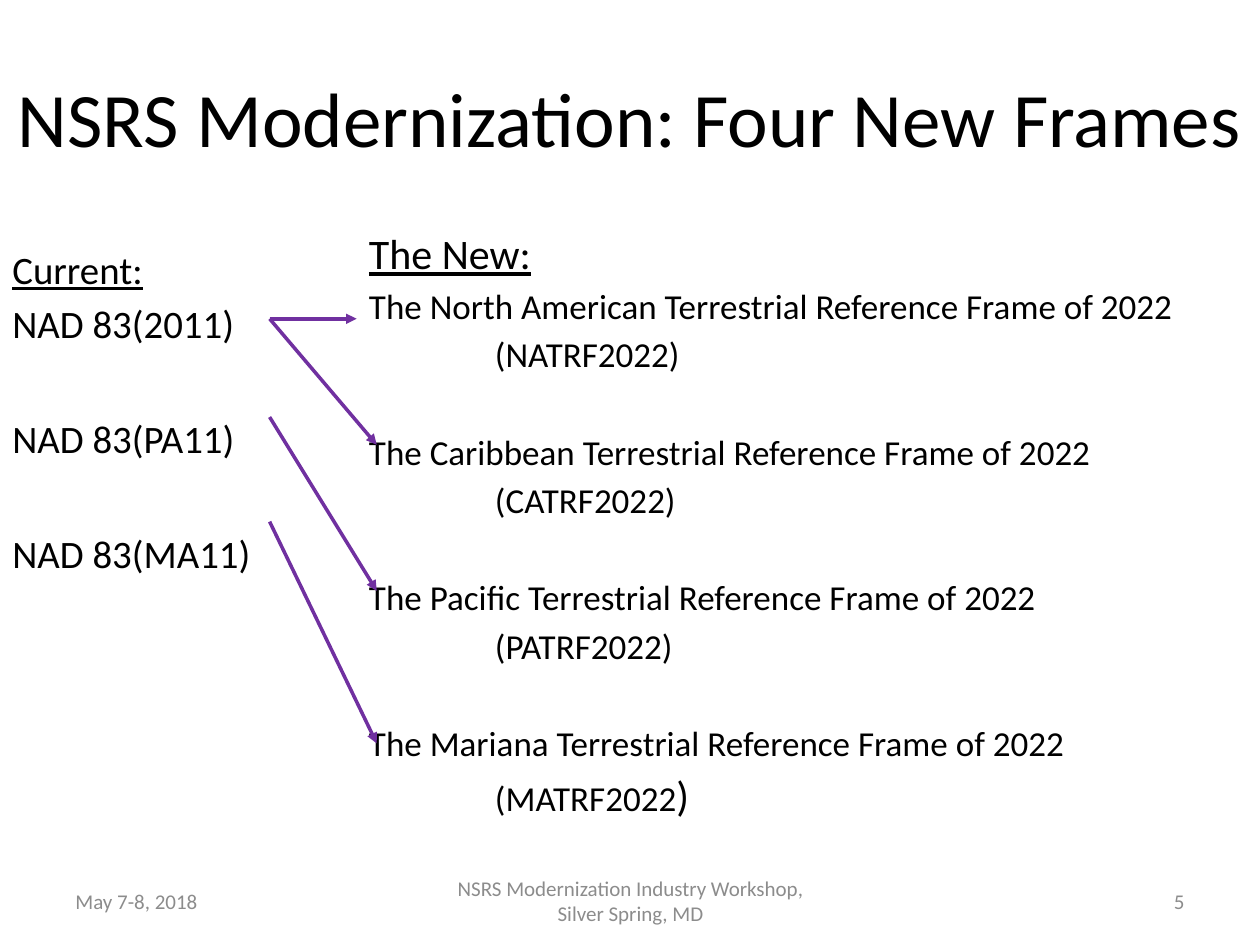
from pptx import Presentation
from pptx.dml.color import RGBColor as RGB
from pptx.enum.shapes import MSO_CONNECTOR as CONNECTOR
from pptx.enum.text import MSO_ANCHOR as ANCHOR, PP_ALIGN as ALIGN
from pptx.oxml.ns import qn
from pptx.util import Inches, Pt
from lxml.etree import SubElement

theme = {
    "font": "Calibri",
    "ink": RGB(0, 0, 0), "muted": RGB(0x8C, 0x8C, 0x8C), "arrow": RGB(0x70, 0x30, 0xA0),
    "title": 44, "heading": 24, "current": 22.2, "frame": 20, "footer": 12,
}

prs = Presentation()
prs.slide_width, prs.slide_height = Inches(10), Inches(7.5)
slide = prs.slides.add_slide(prs.slide_layouts[5])

# Grid of 100 columns by 75 rows
COL, ROW = prs.slide_width / 100, prs.slide_height / 75


def grid(*lengths):
    return [round(n * unit) for n, unit in zip(lengths, (COL, ROW) * 2)]


def style(p, size, color="ink", before=None):
    if before is not None:
        p.space_before = Pt(before)
    for r in p.runs:
        r.font.name, r.font.size = theme["font"], Pt(size)
        r.font.color.rgb = theme[color]


# Title
title = slide.shapes.title
title.left, title.top, title.width, title.height = grid(0, 3, 100, 12.5)
tf = title.text_frame
tf.text = "NSRS Modernization: Four New Frames"
tf.word_wrap = True
tf.vertical_anchor = ANCHOR.MIDDLE
tf.paragraphs[0].alignment = ALIGN.CENTER
style(tf.paragraphs[0], theme["title"])

# Current frames: one skipped line between entries
line_gap, skipped = 4, 35.2
tf = slide.shapes.add_textbox(*grid(0, 19, 29.9, 25.8)).text_frame
tf.word_wrap = True
tf.text = "Current:"
style(tf.paragraphs[0], theme["current"])
tf.paragraphs[0].runs[0].font.underline = True
for i, name in enumerate(["2011", "PA11", "MA11"]):
    p = tf.add_paragraph()
    p.text = f"NAD 83({name})"
    style(p, theme["current"], before=line_gap + (skipped - line_gap + line_gap if i else 0))

# New frames: full name, then the tabbed abbreviation
line_gap, skipped = 3.6, 28
tf = slide.shapes.add_textbox(*grid(28.3, 17.6, 69.2, 52.5)).text_frame
tf.word_wrap = True
tf.text = "The New:"
style(tf.paragraphs[0], theme["heading"])
tf.paragraphs[0].runs[0].font.underline = True
regions = [("North American", "NATRF"), ("Caribbean", "CATRF"),
           ("Pacific", "PATRF"), ("Mariana", "MATRF")]
for i, (region, short) in enumerate(regions):
    p = tf.add_paragraph()
    p.text = f"The {region} Terrestrial Reference Frame of 2022"
    style(p, theme["frame"], before=line_gap + (skipped if i else 0))
    p = tf.add_paragraph()
    p.space_before = Pt(line_gap)
    tabs = SubElement(p._p.get_or_add_pPr(), qn("a:tabLst"))
    SubElement(tabs, qn("a:tab"), pos=str(Inches(1)), algn="l")
    p.text = f"\t({short}2022"
    p.add_run().text = ")"
    style(p, theme["frame"])
p.runs[-1].font.size = Pt(theme["heading"])  # larger closing bracket

# Arrows from current to new frames
arrows = [(25.3, 28.3, 25.3), (25.3, 29.9, 35.3), (33.1, 29.9, 46.9), (41.4, 29.9, 59)]
for start_row, end_col, end_row in arrows:
    line = slide.shapes.add_connector(
        CONNECTOR.STRAIGHT, *grid(21.4, start_row, end_col, end_row))
    line.line.color.rgb = theme["arrow"]
    line.line.width = Pt(2)
    SubElement(line.line._get_or_add_ln(), qn("a:tailEnd"), type="triangle")
    SubElement(line._element.spPr, qn("a:effectLst"))

# Footer
footer = [
    (5, 23.3, ALIGN.LEFT, "May 7-8, 2018"),
    (34.2, 31.7, ALIGN.CENTER, "NSRS Modernization Industry Workshop, Silver Spring, MD"),
    (71.7, 23.3, ALIGN.RIGHT, "5"),
]
for left, width, align, text in footer:
    tf = slide.shapes.add_textbox(*grid(left, 69.5, width, 4)).text_frame
    tf.word_wrap = True
    tf.vertical_anchor = ANCHOR.MIDDLE
    tf.text = text
    tf.paragraphs[0].alignment = align
    style(tf.paragraphs[0], theme["footer"], "muted")

prs.save("out.pptx")
